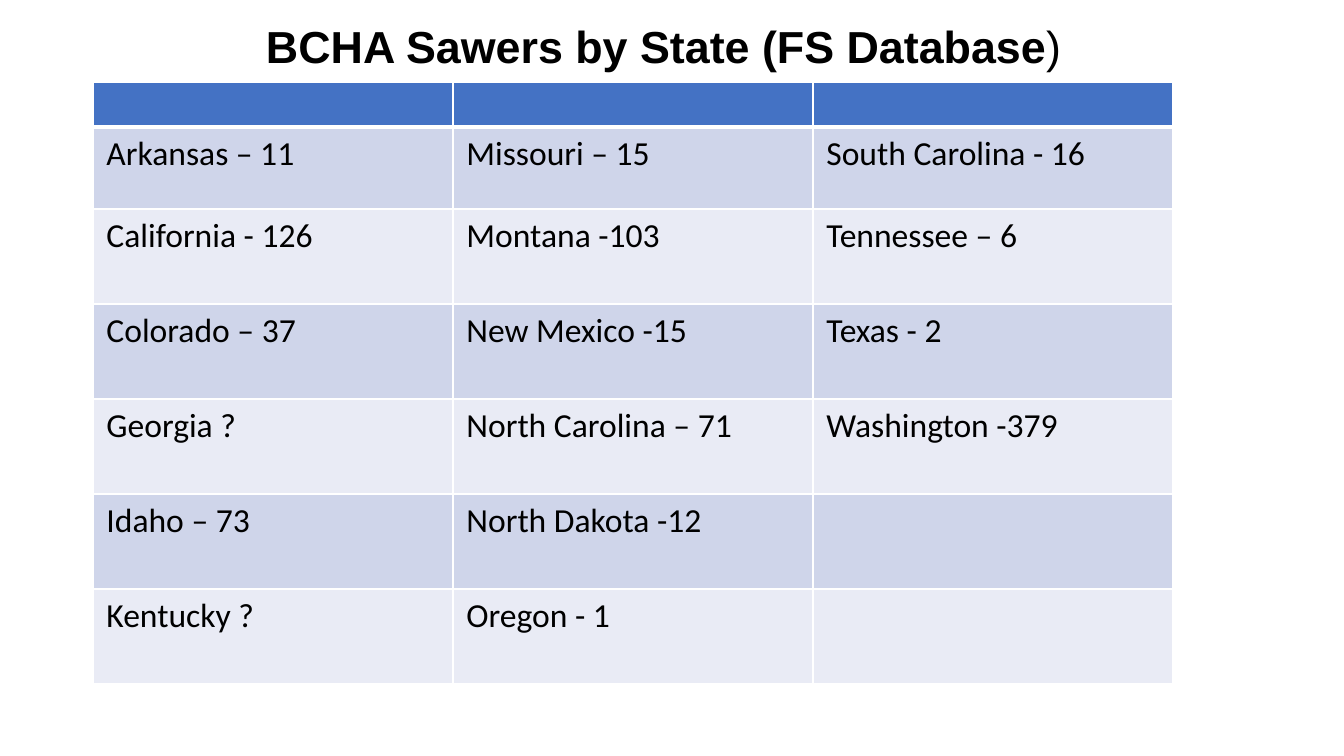
"""Build the slide that lists BCHA sawers by state."""
from dataclasses import dataclass

from lxml.etree import SubElement
from pptx import Presentation
from pptx.dml.color import RGBColor as Rgb
from pptx.enum.text import MSO_AUTO_SIZE as AutoSize, PP_ALIGN as Align
from pptx.oxml.ns import qn
from pptx.util import Emu, Pt

EMU_PER_PX = 914400 / 134.4


@dataclass(frozen=True)
class Theme:
    header: str = "4472C4"
    bands: tuple[str, str] = ("CFD5EA", "E9EBF5")
    rule: str = "FFFFFF"
    ink: str = "000000"
    title_font: str = "Arial"
    body_font: str = "Calibri"
    title_size: int = 24
    body_size: int = 18
    thin_rule: int = 1
    thick_rule: int = 3


@dataclass(frozen=True)
class Box:
    left: int
    top: int
    width: int
    height: int

    def emu(self) -> tuple[Emu, ...]:
        return tuple(px(n) for n in (self.left, self.top, self.width, self.height))


@dataclass(frozen=True)
class StateRow:
    height: int
    entries: tuple[str, str, str]


THEME = Theme()
TITLE_BOX = Box(216, 12, 895, 67)
TABLE_BOX = Box(93, 82, 1080, 602)
STATE_ROWS = (
    StateRow(45, ("", "", "")),
    StateRow(82, ("Arkansas – 11", "Missouri – 15", "South Carolina - 16")),
    StateRow(95, ("California - 126", "Montana -103", "Tennessee – 6")),
    StateRow(95, ("Colorado – 37", "New Mexico -15", "Texas - 2")),
    StateRow(95, ("Georgia ?", "North Carolina – 71", "Washington -379")),
    StateRow(95, ("Idaho – 73", "North Dakota -12", "")),
    StateRow(95, ("Kentucky ?", "Oregon - 1", "")),
)


def px(length: int) -> Emu:
    return Emu(round(length * EMU_PER_PX))


def set_font(paragraph, name: str, size: int) -> None:
    paragraph.font.name = name
    paragraph.font.size = Pt(size)
    paragraph.font.color.rgb = Rgb.from_string(THEME.ink)


def rule_cell(cell, top: int, bottom: int) -> None:
    properties = cell._tc.get_or_add_tcPr()
    widths = {"a:lnL": THEME.thin_rule, "a:lnR": THEME.thin_rule, "a:lnT": top, "a:lnB": bottom}
    for side, width in widths.items():
        line = SubElement(properties, qn(side), w=str(Pt(width)))
        solid = SubElement(line, qn("a:solidFill"))
        SubElement(solid, qn("a:srgbClr"), val=THEME.rule)


def fill_cell(cell, entry: str, row_index: int) -> None:
    is_header = row_index == 0
    rule_cell(
        cell,
        top=THEME.thick_rule if row_index == 1 else THEME.thin_rule,
        bottom=THEME.thick_rule if is_header else THEME.thin_rule,
    )
    cell.fill.solid()
    color = THEME.header if is_header else THEME.bands[(row_index - 1) % 2]
    cell.fill.fore_color.rgb = Rgb.from_string(color)
    if is_header:
        cell.margin_top = cell.margin_bottom = 0
    paragraph = cell.text_frame.paragraphs[0]
    if entry:
        paragraph.text = entry
    set_font(paragraph, THEME.body_font, THEME.body_size)


def draw_states(slide, rows: tuple[StateRow, ...], box: Box) -> None:
    columns = len(rows[0].entries)
    states = slide.shapes.add_table(len(rows), columns, *box.emu()).table
    for column in states.columns:
        column.width = px(box.width // columns)
    for row_index, row in enumerate(rows):
        states.rows[row_index].height = px(row.height)
        for column_index, entry in enumerate(row.entries):
            fill_cell(states.cell(row_index, column_index), entry, row_index)


def draw_title(slide, box: Box) -> None:
    frame = slide.shapes.add_textbox(*box.emu()).text_frame
    frame.word_wrap = True
    frame.auto_size = AutoSize.SHAPE_TO_FIT_TEXT
    heading = frame.paragraphs[0]
    heading.alignment = Align.CENTER
    set_font(heading, THEME.title_font, THEME.title_size)
    for words, bold in (("BCHA Sawers by State (FS Database", True), (")", False)):
        run = heading.add_run()
        run.text = words
        run.font.bold = bold


def main() -> None:
    deck = Presentation()
    deck.slide_width, deck.slide_height = px(1344), px(756)
    slide = deck.slides.add_slide(deck.slide_layouts[6])
    draw_states(slide, STATE_ROWS, TABLE_BOX)
    draw_title(slide, TITLE_BOX)
    deck.save("out.pptx")


if __name__ == "__main__":
    main()
